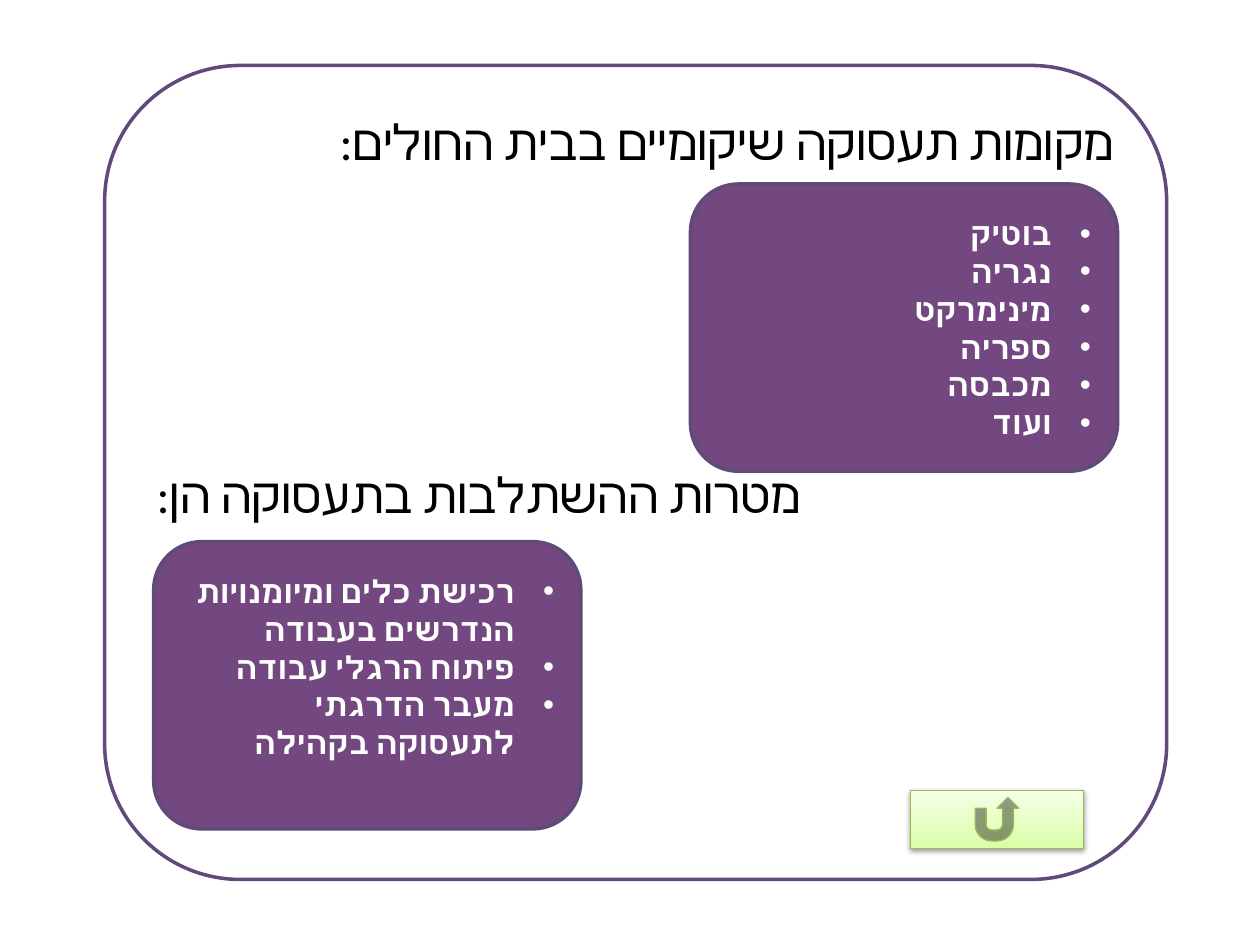
"""Build a right-to-left slide on rehabilitative work places and their goals."""
from lxml.etree import SubElement
from pptx import Presentation
from pptx.dml.color import RGBColor
from pptx.enum.shapes import MSO_SHAPE
from pptx.enum.text import MSO_ANCHOR, MSO_AUTO_SIZE, PP_ALIGN
from pptx.oxml.ns import qn
from pptx.util import Cm, Pt

WHITE = RGBColor(0xFF, 0xFF, 0xFF)
BLACK = RGBColor(0x00, 0x00, 0x00)
PURPLE = RGBColor(0x73, 0x48, 0x80)
PANEL_EDGE = RGBColor(0x5F, 0x4A, 0x78)
FRAME_EDGE = RGBColor(0x60, 0x4A, 0x7B)
GREEN_EDGE = RGBColor(0x98, 0xB9, 0x55)
GREEN = RGBColor(0xDA, 0xFD, 0xA7)
PALE_GREEN = RGBColor(0xF5, 0xFF, 0xE7)

HEADINGS = ["מקומות תעסוקה שיקומיים בבית החולים:", "מטרות ההשתלבות בתעסוקה הן:"]
PLACES = ["בוטיק", "נגריה", "מינימרקט", "ספריה", "מכבסה", "ועוד"]
GOALS = [
    "רכישת כלים ומיומנויות הנדרשים בעבודה",
    "פיתוח הרגלי עבודה",
    "מעבר הדרגתי לתעסוקה בקהילה",
]


def add_panel(page, place, fill, edge):
    panel = page.shapes.add_shape(MSO_SHAPE.ROUNDED_RECTANGLE, *place)
    panel.shadow.inherit = False
    panel.fill.solid()
    panel.fill.fore_color.rgb = fill
    panel.line.color.rgb = edge
    panel.line.width = Pt(2)


def fill_placeholder(page, box, place, texts, frame_format, font_format, color, bullet):
    page.shapes._spTree.append(box._element)
    box.left, box.top, box.width, box.height = place
    for name, value in frame_format.items():
        setattr(box.text_frame, name, value)
    box.text_frame.text = "\n".join(texts)
    for paragraph in box.text_frame.paragraphs:
        paragraph.alignment = PP_ALIGN.RIGHT
        paragraph.space_before = Pt(0)
        properties = paragraph._p.get_or_add_pPr()
        properties.set("rtl", "1")
        if bullet:
            properties.set("marL", str(Cm(0.79)))
            properties.set("indent", str(Cm(-0.79)))
            SubElement(properties, qn("a:buFont"), typeface="Arial")
            SubElement(properties, qn("a:buChar"), char="•")
        for span in paragraph.runs:
            for name, value in font_format.items():
                setattr(span.font, name, value)
            span.font.color.rgb = color
            SubElement(span._r.get_or_add_rPr(), qn("a:cs"), typeface="Calibri")


deck = Presentation()
deck.slide_width, deck.slide_height = Cm(25.4), Cm(19.05)
page = deck.slides.add_slide(deck.slide_layouts[3])
title, places_list, goals_list = page.placeholders

frame_place = Cm(2.11), Cm(1.32), Cm(21.41), Cm(16.41)
heading_frame = {
    "word_wrap": True,
    "auto_size": MSO_AUTO_SIZE.NONE,
    "vertical_anchor": MSO_ANCHOR.TOP,
    "margin_left": Cm(1.05),
    "margin_right": Cm(1.05),
    "margin_top": Cm(0.93),
    "margin_bottom": Cm(0.93),
}
heading_font = {"name": "Calibri", "size": Pt(28), "bold": False}
add_panel(page, frame_place, WHITE, FRAME_EDGE)
fill_placeholder(page, title, frame_place, HEADINGS, heading_frame, heading_font, BLACK, False)
goals_heading = title.text_frame.paragraphs[1]
goals_heading.alignment = PP_ALIGN.LEFT
goals_heading.space_before = Pt(168)

list_font = {"name": "Calibri", "size": Pt(18), "bold": True}
for box, texts, left, top, bottom_margin in [
    (places_list, PLACES, 13.92, 3.71, 0.41),
    (goals_list, GOALS, 3.1, 10.92, 1.17),
]:
    place = Cm(left), Cm(top), Cm(8.61), Cm(5.79)
    list_frame = {
        "word_wrap": True,
        "auto_size": MSO_AUTO_SIZE.NONE,
        "vertical_anchor": MSO_ANCHOR.MIDDLE,
        "margin_left": Cm(0.54),
        "margin_right": Cm(0.54),
        "margin_top": Cm(0.41),
        "margin_bottom": Cm(bottom_margin),
    }
    add_panel(page, place, PURPLE, PANEL_EDGE)
    fill_placeholder(page, box, place, texts, list_frame, list_font, WHITE, True)

button = page.shapes.add_shape(
    MSO_SHAPE.ACTION_BUTTON_RETURN, Cm(18.36), Cm(15.93), Cm(3.48), Cm(1.17)
)
button.fill.gradient()
button.fill.gradient_angle = 90
for stop, color, position in zip(button.fill.gradient_stops, [GREEN, PALE_GREEN], [0, 1]):
    stop.color.rgb = color
    stop.position = position
button.line.color.rgb = GREEN_EDGE
button.line.width = Pt(0.75)
button.shadow.inherit = False
effects = button._element.spPr.find(qn("a:effectLst"))
shadow = SubElement(
    effects, qn("a:outerShdw"), blurRad=str(Pt(3.1)), dist=str(Pt(1.6)), dir="5400000", rotWithShape="0"
)
shadow_color = SubElement(shadow, qn("a:srgbClr"), val=str(BLACK))
SubElement(shadow_color, qn("a:alpha"), val="38000")

deck.save("out.pptx")
